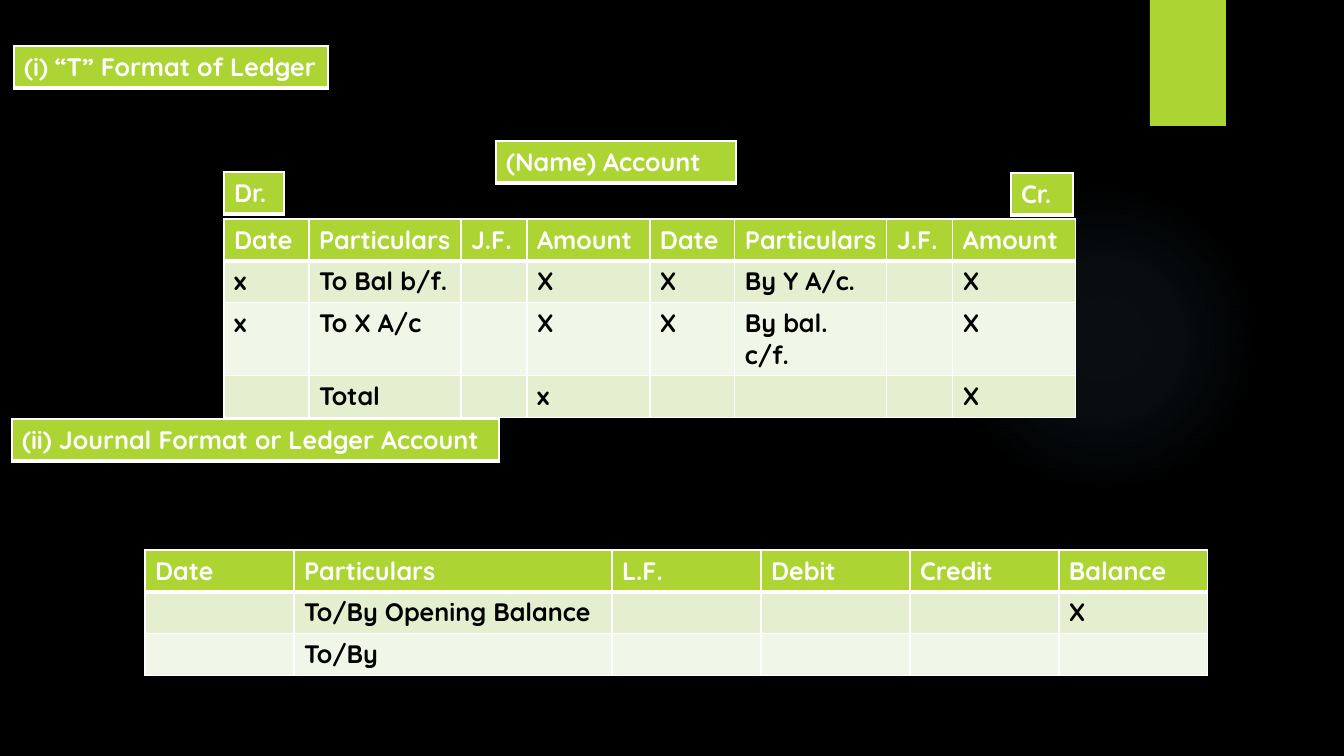
from dataclasses import dataclass

from lxml.etree import SubElement
from pptx import Presentation
from pptx.dml.color import RGBColor
from pptx.enum.shapes import MSO_SHAPE
from pptx.oxml import parse_xml
from pptx.oxml.ns import nsdecls, qn
from pptx.util import Emu, Pt

BLACK = RGBColor(0x00, 0x00, 0x00)
WHITE = RGBColor(0xFF, 0xFF, 0xFF)
LIME = RGBColor(0xAC, 0xD4, 0x33)
BAND_DARK = RGBColor(0xE3, 0xEF, 0xCE)
BAND_LIGHT = RGBColor(0xF1, 0xF7, 0xE8)
GLOW = RGBColor(0x7A, 0xC4, 0xF0)

FONT = "Quicksand"
SLIDE_W, SLIDE_H = 1344, 756
ROW_H = 41
GLOW_STOPS = [(0, 7), (36, 6), (69, 0)]  # position %, opacity %


@dataclass(frozen=True)
class Grid:
    left: int
    top: int
    cols: list[int]
    rows: list[list[str]]


T_HALF = [85, 152, 66, 123]
T_HEADER = ["Date", "Particulars", "J.F.", "Amount"]

GRIDS = [
    Grid(14, 46, [314], [["(i) “T” Format of Ledger"]]),
    Grid(496, 141, [240], [["(Name) Account"]]),
    Grid(224, 219, T_HALF * 2, [
        T_HEADER * 2,
        ["x", "To Bal b/f.", "", "X", "X", "By Y A/c.", "", "X"],
        ["x", "To X A/c", "", "X", "X", "By bal. c/f.", "", "X"],
        ["", "Total", "", "x", "", "", "", "X"],
    ]),
    Grid(224, 172, [60], [["Dr."]]),
    Grid(1011, 173, [62], [["Cr."]]),
    Grid(12, 419, [487], [["(ii) Journal Format or Ledger Account"]]),
    Grid(145, 550, [149, 318, 149, 149, 149, 149], [
        ["Date", "Particulars", "L.F.", "Debit", "Credit", "Balance"],
        ["", "To/By Opening Balance", "", "", "", "X"],
        ["", "To/By", "", "", "", ""],
    ]),
]


def px(n: int) -> Emu:
    return Emu(round(n * 914400 / 100.8))


def add_border(cell, row: int) -> None:
    """White cell edges, thick beneath the header row."""
    tc_pr = cell._tc.get_or_add_tcPr()
    widths = {"lnL": 1, "lnR": 1, "lnT": 3 if row == 1 else 1, "lnB": 3 if row == 0 else 1}
    for tag, width in widths.items():
        ln = SubElement(tc_pr, qn(f"a:{tag}"), w=str(Pt(width)))
        fill = SubElement(ln, qn("a:solidFill"))
        SubElement(fill, qn("a:srgbClr"), val=str(WHITE))


def format_cell(cell, text: str, row: int) -> None:
    add_border(cell, row)
    cell.fill.solid()
    if row == 0:
        cell.fill.fore_color.rgb = LIME
    else:
        cell.fill.fore_color.rgb = BAND_DARK if row % 2 else BAND_LIGHT
    p = cell.text_frame.paragraphs[0]
    if text:
        p.add_run().text = text
    p.font.name = FONT
    p.font.size = Pt(18)
    p.font.bold = True
    p.font.color.rgb = BLACK if row else WHITE


def add_grid(s, grid: Grid) -> None:
    table = s.shapes.add_table(
        len(grid.rows), len(grid.cols), px(grid.left), px(grid.top),
        px(sum(grid.cols)), px(ROW_H * len(grid.rows))).table
    for column, width in zip(table.columns, grid.cols):
        column.width = px(width)
    for r, texts in enumerate(grid.rows):
        table.rows[r].height = px(ROW_H)
        for c, text in enumerate(texts):
            format_cell(table.cell(r, c), text, r)


def add_plain_shape(s, kind: MSO_SHAPE, left: int, top: int, width: int, height: int):
    sp = s.shapes.add_shape(kind, px(left), px(top), px(width), px(height))
    sp.shadow.inherit = False
    sp.line.fill.background()
    return sp


def add_glow(s) -> None:
    sp = add_plain_shape(s, MSO_SHAPE.OVAL, 949, 184, 310, 310)
    stops = "".join(
        f'<a:gs pos="{pos * 1000}"><a:srgbClr val="{GLOW}">'
        f'<a:alpha val="{alpha * 1000}"/></a:srgbClr></a:gs>'
        for pos, alpha in GLOW_STOPS)
    gradient = parse_xml(
        f'<a:gradFill {nsdecls("a")} rotWithShape="1"><a:gsLst>{stops}</a:gsLst>'
        '<a:path path="circle"><a:fillToRect l="50000" t="50000" r="50000" b="50000"/>'
        '</a:path></a:gradFill>')
    sp._element.spPr.find(qn("a:prstGeom")).addnext(gradient)


def add_corner_tab(s) -> None:
    sp = add_plain_shape(s, MSO_SHAPE.RECTANGLE, 1150, 0, 76, 126)
    sp.fill.solid()
    sp.fill.fore_color.rgb = LIME


def main() -> None:
    prs = Presentation()
    prs.slide_width, prs.slide_height = px(SLIDE_W), px(SLIDE_H)
    s = prs.slides.add_slide(prs.slide_layouts[6])
    s.background.fill.solid()
    s.background.fill.fore_color.rgb = BLACK
    add_glow(s)
    add_corner_tab(s)
    for grid in GRIDS:
        add_grid(s, grid)
    prs.save("out.pptx")


if __name__ == "__main__":
    main()
